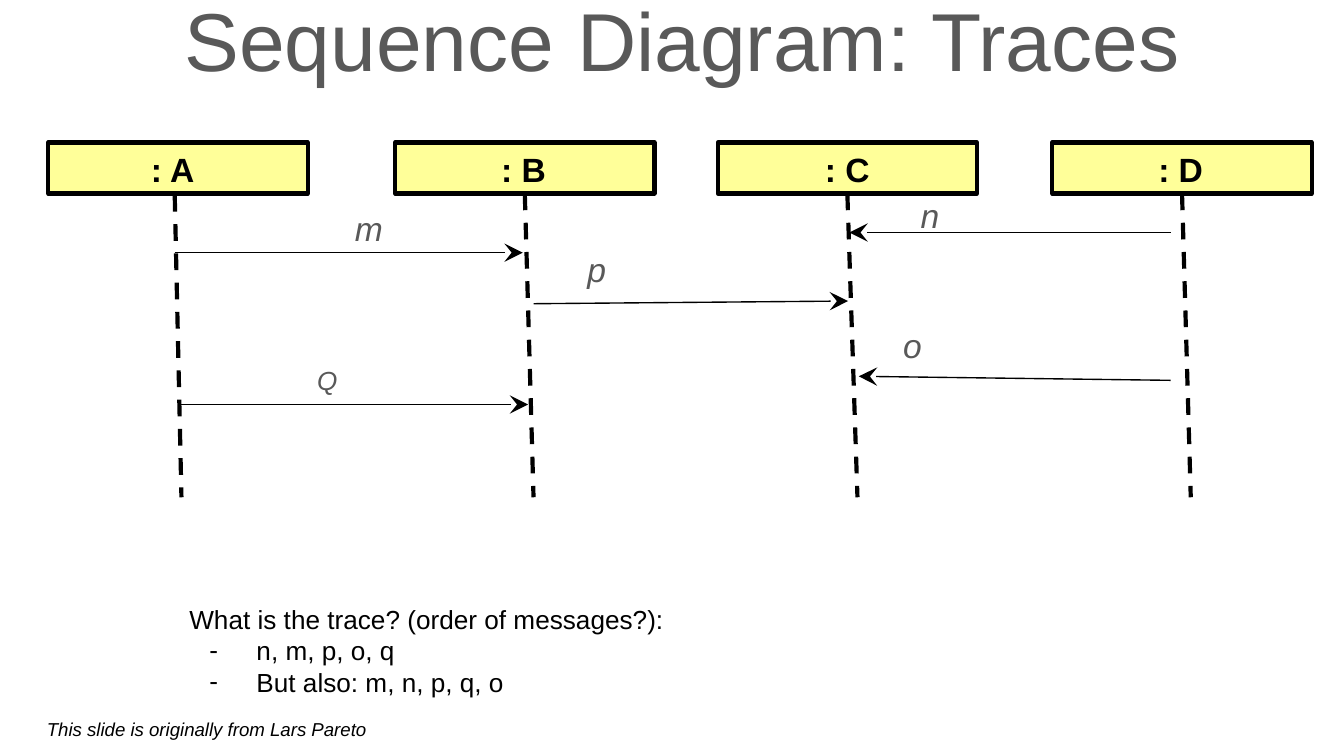
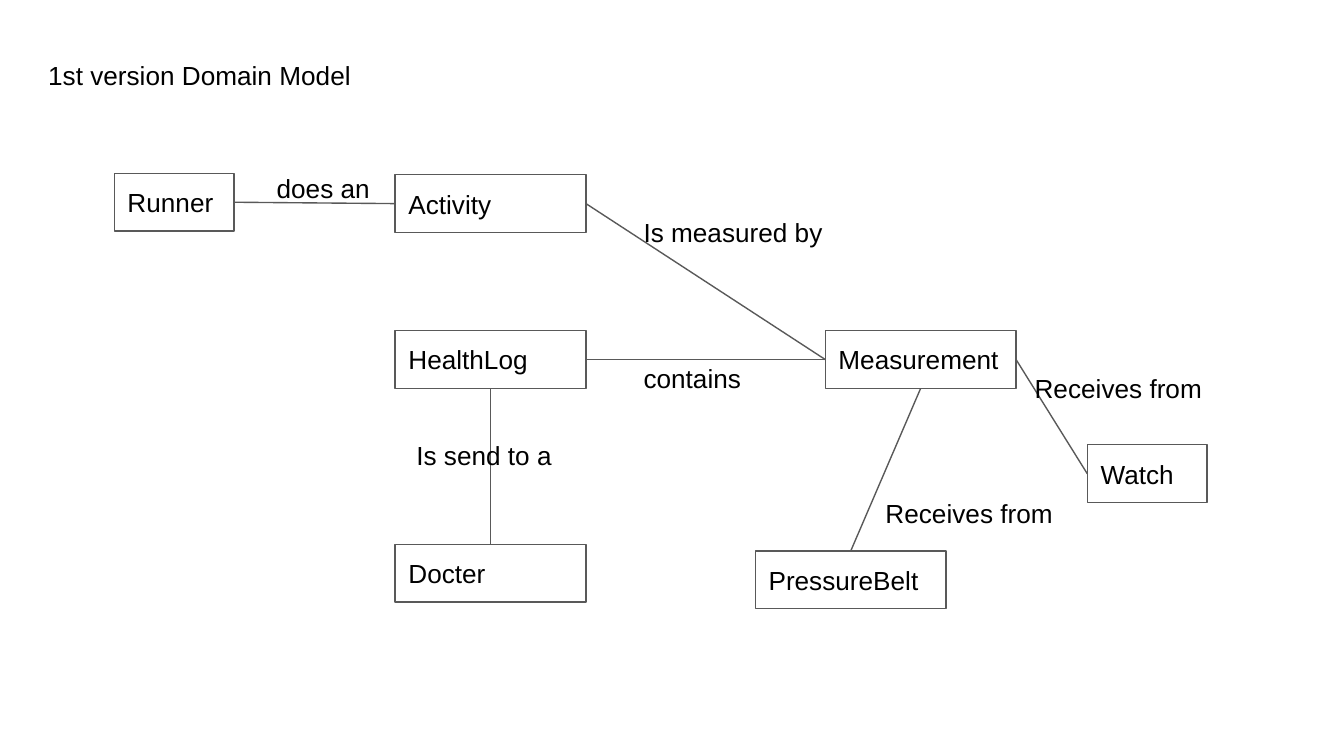
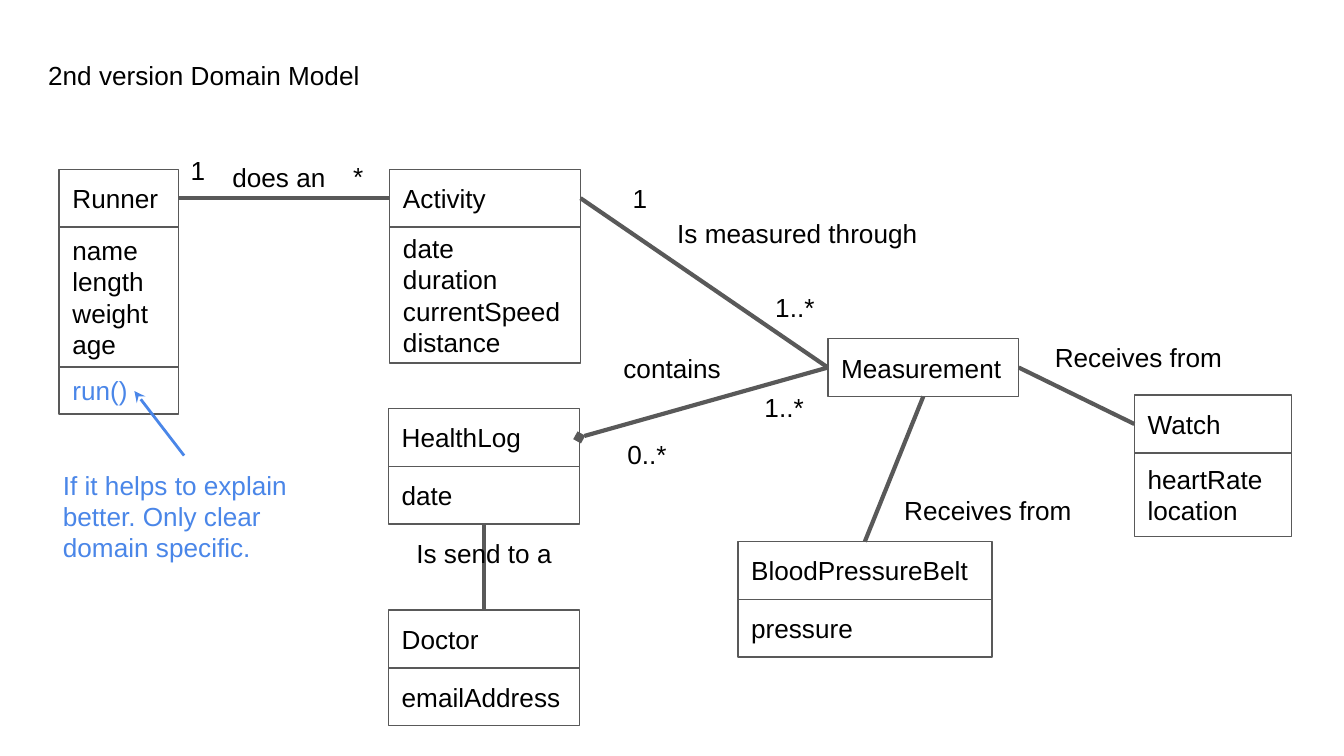
from pptx import Presentation
from pptx.dml.color import RGBColor
from pptx.enum.dml import MSO_LINE
from pptx.enum.shapes import MSO_CONNECTOR, MSO_SHAPE
from pptx.enum.text import MSO_ANCHOR, PP_ALIGN
from pptx.oxml.ns import qn
from pptx.util import Inches, Pt
from lxml.etree import SubElement

BLACK = RGBColor(0x00, 0x00, 0x00)
GREY = RGBColor(0x59, 0x59, 0x59)
BLUE = RGBColor(0x4A, 0x86, 0xE8)
YELLOW = RGBColor(0xFF, 0xFF, 0x99)
FONT = "Arial"
ROW = 0.43
TOP, LEFT, BOTTOM, RIGHT = range(4)


def write(frame, text, size=14, color=BLACK, bold=False, italic=False,
          align=PP_ALIGN.LEFT, anchor=MSO_ANCHOR.TOP, inset=0.1, dash=None):
    frame.word_wrap = True
    frame.vertical_anchor = anchor
    frame.margin_left = frame.margin_right = Inches(inset)
    frame.margin_top = frame.margin_bottom = Inches(inset)
    for num, line in enumerate(text.split("\n")):
        para = frame.add_paragraph() if num else frame.paragraphs[0]
        para.alignment = align
        run = para.add_run()
        run.text = line
        font = run.font
        font.name, font.size, font.color.rgb = FONT, Pt(size), color
        font.bold, font.italic = bold, italic
        if dash is not None and num >= dash:
            props = para._p.get_or_add_pPr()
            props.set("marL", str(Inches(0.5)))
            props.set("indent", str(Inches(-0.35)))
            tint = SubElement(props, qn("a:buClr"))
            SubElement(tint, qn("a:srgbClr")).set("val", str(color))
            SubElement(props, qn("a:buFont")).set("typeface", FONT)
            SubElement(props, qn("a:buChar")).set("char", "-")


class Deck:
    def __init__(self):
        self.show = Presentation()
        self.show.slide_width = Inches(10)
        self.show.slide_height = Inches(10) * 9 // 16
        self.slide = None

    def page(self):
        self.slide = self.show.slides.add_slide(self.show.slide_layouts[6])

    def label(self, x, y, w, h, text, **style):
        box = self.slide.shapes.add_textbox(*map(Inches, (x, y, w, h)))
        write(box.text_frame, text, **style)

    def box(self, x, y, w, h, text="", fill=None, edge=GREY, width=0.75, **style):
        rect = self.slide.shapes.add_shape(
            MSO_SHAPE.RECTANGLE, *map(Inches, (x, y, w, h)))
        rect.shadow.inherit = False
        if fill is None:
            rect.fill.background()
        else:
            rect.fill.solid()
            rect.fill.fore_color.rgb = fill
        rect.line.color.rgb, rect.line.width = edge, Pt(width)
        if text:
            write(rect.text_frame, text, anchor=MSO_ANCHOR.MIDDLE, **style)
        return rect

    def node(self, x, y, w, name, *parts):
        rects = [self.box(x, y, w, ROW, name)]
        y += ROW
        for text, h, color in parts:
            rects.append(self.box(x, y, w, h, text, color=color))
            y += h
        return rects

    def line(self, start, end, color=GREY, width=0.75, dash=False,
             head=None, tail=None, size="med"):
        link = self.slide.shapes.add_connector(
            MSO_CONNECTOR.STRAIGHT, *map(Inches, (*start, *end)))
        link.line.color.rgb, link.line.width = color, Pt(width)
        if dash:
            link.line.dash_style = MSO_LINE.DASH
        stroke = link.line._get_or_add_ln()
        for tag, kind in (("a:headEnd", head), ("a:tailEnd", tail)):
            if kind:
                tip = SubElement(stroke, qn(tag))
                for key, value in (("type", kind), ("w", size), ("len", size)):
                    tip.set(key, value)
        SubElement(link._element.spPr, qn("a:effectLst"))
        return link

    def join(self, first, side, second, other, **style):
        link = self.line((0, 0), (1, 1), **style)
        link.begin_connect(first, side)
        link.end_connect(second, other)


def traces(deck):
    deck.page()
    deck.label(0.08, -0.18, 10, 0.94, "Sequence Diagram: Traces", size=44,
               color=GREY, align=PP_ALIGN.CENTER, anchor=MSO_ANCHOR.MIDDLE,
               inset=0.05)
    for name, x, spot, mid, foot in (
            ("A", 0.36, 1.1, 1.3, 1.35), ("B", 2.94, 3.71, 3.9, 3.97),
            ("C", 5.34, 6.12, 6.31, 6.38), ("D", 7.83, 8.6, 8.79, 8.86)):
        life = deck.line((mid, 1.45), (foot, 3.7), BLACK, 2.25, dash=True)
        rect = deck.box(x, 1.06, 1.93, 0.38, fill=YELLOW, edge=BLACK, width=2.25)
        if name != "A":
            life.begin_connect(rect, BOTTOM)
        deck.label(spot, 1.11, 0.37, 0.25, f": {name}", size=18, bold=True,
                   align=PP_ALIGN.CENTER, inset=0)
    for text, x, y, size, start, end in (
            ("m", 2.64, 1.55, 18, (1.3, 1.88), (3.89, 1.88)),
            ("n", 6.85, 1.45, 18, (8.71, 1.73), (6.32, 1.73)),
            ("o", 6.72, 2.42, 18, (8.71, 2.83), (6.39, 2.8)),
            ("p", 4.37, 1.85, 18, (3.97, 2.26), (6.31, 2.24)),
            ("Q", 2.36, 2.71, 14, (1.34, 3.01), (3.93, 3.01))):
        deck.label(x, y, 1.25, 0.3, text, size=size, color=GREY, italic=True,
                   inset=0)
        deck.line(start, end, BLACK, tail="stealth", size="lg")
    deck.label(1.31, 4.39, 5.29, 0.62,
               "What is the trace? (order of messages?):\n"
               "n, m, p, o, q\nBut also: m, n, p, q, o", dash=1)
    deck.label(0.25, 5.26, 3.55, 0.48, "This slide is originally from Lars Pareto",
               size=10, italic=True)


def first(deck):
    deck.page()
    deck.label(0.26, 0.34, 2.48, 0.62, "1st version Domain Model")
    runner, watch, measure, belt, active, log, docter = (
        deck.box(x, y, w, ROW, name) for name, x, y, w in (
            ("Runner", 0.85, 1.29, 0.89), ("Watch", 8.09, 3.31, 0.89),
            ("Measurement", 6.14, 2.46, 1.42), ("PressureBelt", 5.62, 4.1, 1.42),
            ("Activity", 2.94, 1.3, 1.42), ("HealthLog", 2.94, 2.46, 1.42),
            ("Docter", 2.94, 4.05, 1.42)))
    for ends in ((runner, RIGHT, active, LEFT), (watch, LEFT, measure, RIGHT),
                 (belt, TOP, measure, BOTTOM), (active, RIGHT, measure, LEFT),
                 (measure, LEFT, log, RIGHT), (docter, TOP, log, BOTTOM)):
        deck.join(*ends)
    for text, x, y, w in (
            ("does an", 1.96, 1.18, 0.98), ("Receives from", 7.6, 2.67, 1.7),
            ("Receives from", 6.49, 3.6, 1.7), ("Is measured by", 4.69, 1.51, 1.56),
            ("contains", 4.69, 2.6, 1.06), ("Is send to a", 3, 3.17, 1.7)):
        deck.label(x, y, w, ROW, text)


def second(deck):
    deck.page()
    deck.label(0.26, 0.34, 2.78, 0.62, "2nd version Domain Model")
    runner, watch, measure, belt, active, log, doctor = (
        deck.node(*spot) for spot in (
            (0.44, 1.26, 0.89, "Runner",
             ("name\nlength\nweight\nage", 1.04, BLACK), ("run()", 0.35, BLUE)),
            (8.44, 2.94, 1.17, "Watch", ("heartRate\nlocation", 0.62, BLACK)),
            (6.16, 2.52, 1.42, "Measurement"),
            (5.49, 4.03, 1.89, "BloodPressureBelt", ("pressure", ROW, BLACK)),
            (2.9, 1.26, 1.42, "Activity",
             ("date\nduration\ncurrentSpeed\ndistance", 1.01, BLACK)),
            (2.89, 3.04, 1.42, "HealthLog", ("date", ROW, BLACK)),
            (2.89, 4.54, 1.42, "Doctor", ("emailAddress", ROW, BLACK))))
    for ends in ((runner[0], RIGHT, active[0], LEFT),
                 (watch[0], LEFT, measure[0], RIGHT),
                 (belt[0], TOP, measure[0], BOTTOM),
                 (active[0], RIGHT, measure[0], LEFT),
                 (doctor[0], TOP, log[1], BOTTOM)):
        deck.join(*ends, width=2.25)
    deck.join(log[0], RIGHT, measure[0], LEFT, width=2.25, head="diamond")
    for text, x, y, w in (
            ("does an", 1.63, 1.1, 0.98), ("Receives from", 7.75, 2.44, 1.7),
            ("Receives from", 6.63, 3.58, 1.7),
            ("Is measured through", 4.94, 1.52, 2.15),
            ("contains", 4.54, 2.52, 1.06), ("Is send to a", 3, 3.9, 1.7)):
        deck.label(x, y, w, ROW, text)
    for text, x, y, w in (
            ("*", 2.53, 1.09, 0.3), ("1..*", 5.59, 2.81, 0.56),
            ("1..*", 5.67, 2.07, 0.56), ("1", 1.32, 1.05, 0.3),
            ("1", 4.61, 1.26, 0.56), ("0..*", 4.57, 3.16, 0.56)):
        deck.label(x, y, w, 0.28, text)
    deck.label(0.37, 3.39, 2, 1.08,
               "If it helps to explain better. Only clear domain specific.",
               color=BLUE)
    deck.line((1, 2.91), (1.37, 3.39), BLUE, 1.5, head="stealth")


def main():
    deck = Deck()
    for build in (traces, first, second):
        build(deck)
    deck.show.save("out.pptx")


if __name__ == "__main__":
    main()
